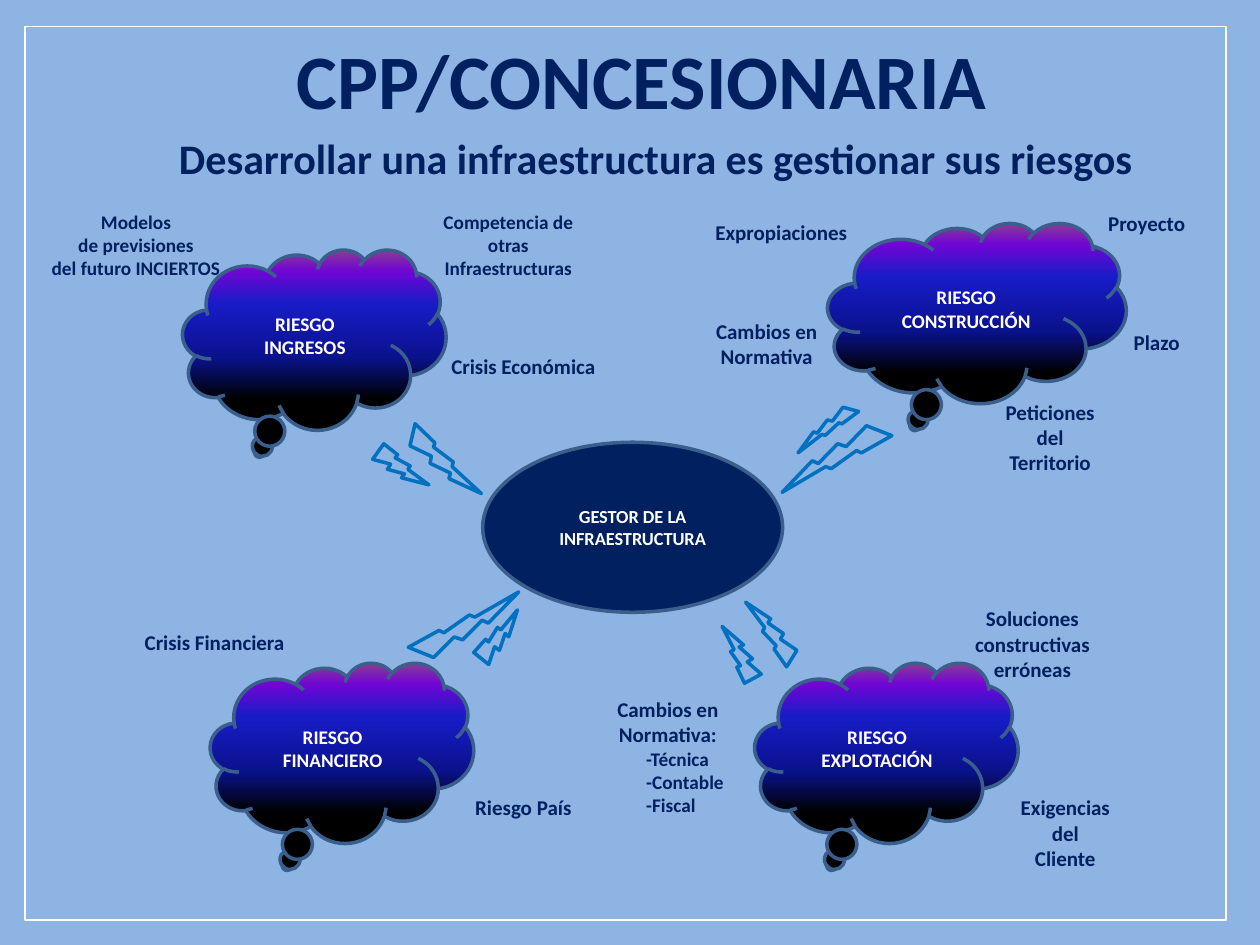
from lxml import etree
from pptx import Presentation
from pptx.dml.color import RGBColor
from pptx.enum.shapes import MSO_SHAPE as Shape
from pptx.enum.text import MSO_ANCHOR as Anchor, MSO_AUTO_SIZE as AutoSize, PP_ALIGN as Align
from pptx.oxml.ns import qn
from pptx.util import Pt

NAVY, WHITE, EDGE, BOLT, SKY = "002060", "FFFFFF", "3A5F8C", "0070C0", "8EB4E3"
STORM = [(17, "000000"), (40, "0A128C"), (70, "181CC7"), (88, "7005D4"), (100, "8C3D91")]

RISKS = [
    {"box": (104.4, 142.6, 150.5, 103), "name": "RIESGO\nINGRESOS",
     "bolts": [(111.6, 108.7, 23.8, 31.7, 336.9), (136.8, 95, 22.3, 53.3, 330.8)],
     "labels": [("Competencia de otras Infraestructuras", 11, (136.8, -26, 98.6, 47.5)),
                ("Modelos\nde previsiones\ndel futuro INCIERTOS", 11, (-90, -26, 126.7, 60.5)),
                ("Crisis Económica", 12, (145.4, 56.1, 98.6, 33.1))]},
    {"box": (120.2, 378.7, 150.5, 103), "name": "RIESGO\nFINANCIERO",
     "bolts": [(152.7, -29.5, 23.8, 31.7, 250.3), (134, -54.7, 23.8, 69.1, 255.2)],
     "labels": [("Riesgo País", 12, (129.6, 72, 98.6, 19.4)),
                ("Crisis Financiera", 12, (-46.8, -22.3, 98.6, 33.1))]},
    {"box": (473, 127.4, 170.6, 103), "name": "RIESGO\nCONSTRUCCIÓN",
     "bolts": [(-7.9, 96.5, 14.4, 41, 67.7), (-7.9, 98.7, 23.8, 69.1, 74.5)],
     "labels": [("Proyecto", 12, (148.4, -10.8, 67.7, 19.4)),
                ("Plazo", 12, (154.1, 57.6, 67.7, 20.9)),
                ("Expropiaciones", 12, (-82, -5.7, 110.9, 21.6)),
                ("Cambios en Normativa", 12, (-79.2, 51.2, 88.6, 33.1)),
                ("Peticiones\ndel\nTerritorio", 12, (82.8, 97.2, 88.6, 46.1))]},
    {"box": (431.3, 378.7, 150.5, 103), "name": "RIESGO\nEXPLOTACIÓN",
     "bolts": [(-19.5, -20.1, 23.8, 31.7, 183.1), (0, -38.1, 20.9, 41.8, 164.5)],
     "labels": [("Soluciones constructivas erróneas", 12, (109.4, -36, 98.6, 46.1)),
                ("Exigencias\ndel\nCliente", 12, (115.9, 72, 123.1, 51.1)),
                ("Cambios en Normativa:\n-Técnica\n-Contable\n-Fiscal", 12,
                 (-105.1, 15.9, 110.9, 76.3))]},
]


def color(value):
    return RGBColor.from_string(value)


def points(box):
    return [Pt(length) for length in box]


def write(shape, text, size, shade, anchor=Anchor.TOP, fit=AutoSize.NONE):
    frame = shape.text_frame
    frame.text = text
    frame.word_wrap = True
    frame.auto_size = fit
    frame.vertical_anchor = anchor
    for para in frame.paragraphs:
        is_item = para.text.startswith("-")
        para.level = 1 if is_item else 0
        para.alignment = Align.LEFT if is_item else Align.CENTER
        para.font.size = Pt(11 if is_item else size)
        para.font.name = "Calibri"
        para.font.bold = True
        para.font.color.rgb = color(shade)
    return frame


def add_label(page, box, text, size, anchor=Anchor.TOP):
    label = page.shapes.add_textbox(*points(box))
    return write(label, text, size, NAVY, anchor, AutoSize.SHAPE_TO_FIT_TEXT)


def add_outlined(page, kind, box, line, width=2, fill=None):
    shape = page.shapes.add_shape(kind, *points(box))
    shape.shadow.inherit = False
    shape.line.color.rgb = color(line)
    shape.line.width = Pt(width)
    if fill:
        shape.fill.solid()
        shape.fill.fore_color.rgb = color(fill)
    else:
        shape.fill.background()
    return shape


def fill_storm(shape):
    shape.fill.gradient()
    shape.fill.gradient_angle = 90
    stops = shape.element.spPr.find(qn("a:gradFill")).find(qn("a:gsLst"))
    for stop in list(stops):
        stops.remove(stop)
    for position, shade in STORM:
        stop = etree.SubElement(stops, qn("a:gs"), pos=str(position * 1000))
        etree.SubElement(stop, qn("a:srgbClr"), val=shade)


def add_risk(page, box, name, bolts, labels):
    left, top = box[:2]
    for x, y, width, height, angle in bolts:
        bolt = add_outlined(page, Shape.LIGHTNING_BOLT, (left + x, top + y, width, height), BOLT)
        bolt.rotation = angle
    cloud = add_outlined(page, Shape.CLOUD_CALLOUT, box, EDGE)
    fill_storm(cloud)
    write(cloud, name, 11, WHITE, Anchor.MIDDLE)
    for text, size, (x, y, width, height) in labels:
        add_label(page, (left + x, top + y, width, height), text, size)


def add_heading(page, box):
    left, top, width, height = box
    title = page.shapes.title
    title.left, title.top, title.width, title.height = points((left, top, width, 60.5))
    write(title, "CPP/CONCESIONARIA", 44, NAVY)
    subtitle = add_label(page, (left + 18.7, top + 28.1, width - 21.6, height - 28.1),
                         "Desarrollar una infraestructura es gestionar sus riesgos", 24,
                         Anchor.MIDDLE)
    subtitle.paragraphs[0].line_spacing = 2.0


def add_manager(page, box):
    manager = add_outlined(page, Shape.OVAL, box, EDGE, fill=NAVY)
    write(manager, "GESTOR DE LA INFRAESTRUCTURA", 10.5, WHITE, Anchor.MIDDLE)


def main():
    deck = Presentation()
    deck.slide_width, deck.slide_height = Pt(720), Pt(540)
    page = deck.slides.add_slide(deck.slide_layouts[5])
    page.background.fill.solid()
    page.background.fill.fore_color.rgb = color(SKY)
    add_manager(page, (275.8, 252.7, 171.4, 97.2))
    for risk in RISKS:
        add_risk(page, **risk)
    add_heading(page, (35.3, 15.1, 663.1, 93.6))
    add_outlined(page, Shape.RECTANGLE, (14.4, 15.1, 686.2, 510.5), WHITE, 1)
    deck.save("out.pptx")


if __name__ == "__main__":
    main()
